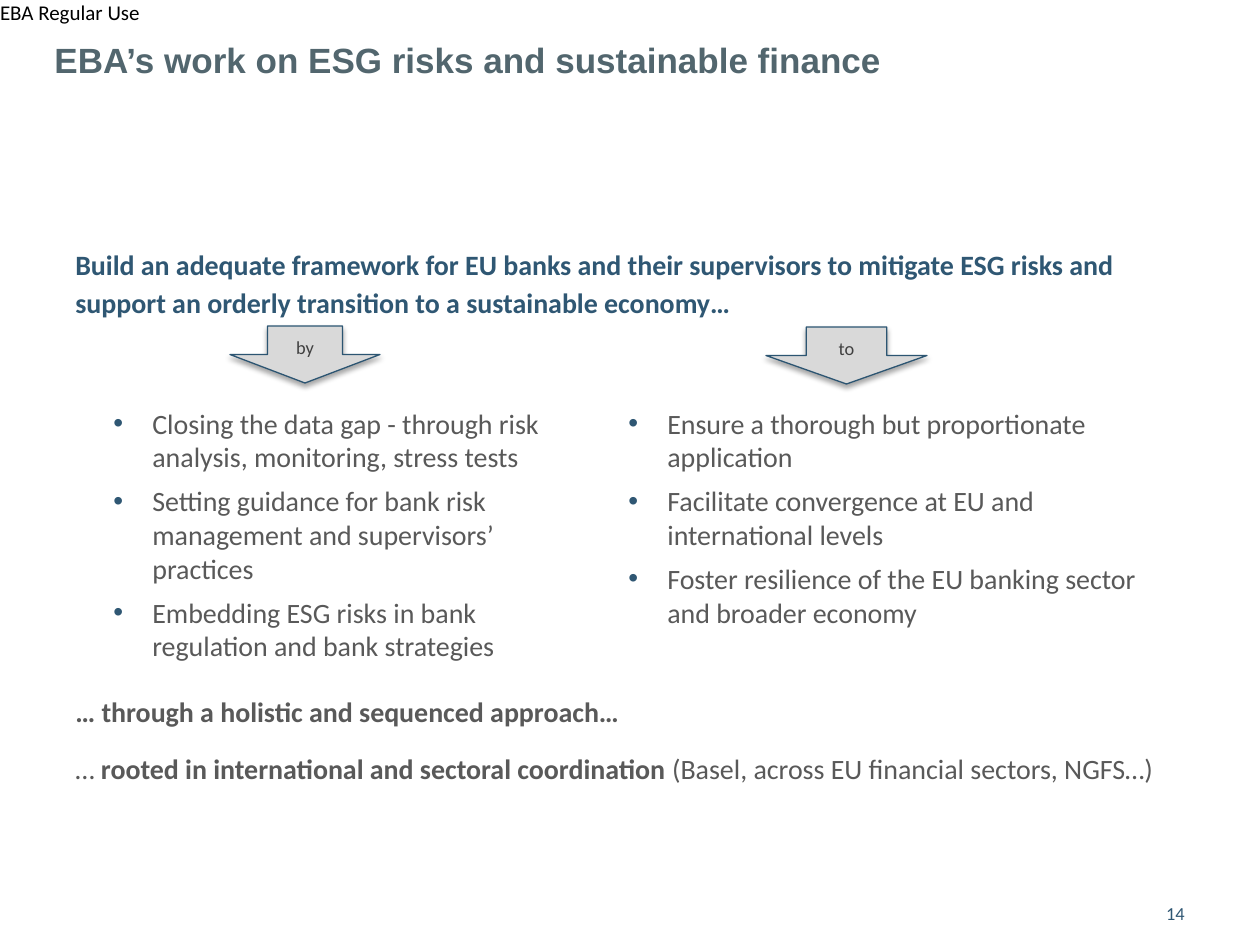
from lxml import etree
from pptx import Presentation
from pptx.dml.color import RGBColor
from pptx.enum.shapes import MSO_SHAPE as Shape
from pptx.enum.text import MSO_ANCHOR as Anchor, PP_ALIGN as Align
from pptx.oxml import parse_xml
from pptx.oxml.ns import nsdecls, qn
from pptx.util import Emu, Pt

COLORS = {
    "black": "000000", "slate": "52666E", "navy": "2F5773", "outline": "2C5572",
    "body": "595959", "label": "404040", "arrow": "D9D9D9",
}

# Content: each paragraph is a list of (text, bold) runs
CLASSIFICATION = [[("EBA Regular Use", False)]]
TITLE = [[("EBA’s work on ESG risks and sustainable finance", True)]]
GOAL = [[("Build an adequate framework for EU banks and their supervisors to mitigate "
          "ESG risks and support an orderly transition to a sustainable economy…", True)]]
APPROACH = [
    [("… through a holistic and sequenced approach…", True)],
    [("… ", False), ("rooted in international and sectoral coordination ", True),
     ("(Basel, across EU financial sectors, NGFS…)", False)],
]
PAGE_NUMBER = [[("14", False)]]

# Arrow label, arrow box, list box, list items
COLUMNS = [
    ("by", (230, 326, 150, 57), (101, 400, 472, 233), [
        "Closing the data gap - through risk analysis, monitoring, stress tests",
        "Setting guidance for bank risk management and supervisors’ practices",
        "Embedding ESG risks in bank regulation and bank strategies",
    ]),
    ("to", (766, 327, 161, 57), (616, 400, 543, 233), [
        "Ensure a thorough but proportionate application",
        "Facilitate convergence at EU and international levels",
        "Foster resilience of the EU banking sector and broader economy",
    ]),
]

PX = 914400 / 126
INDENT = 39


def px(value):
    return Emu(round(value * PX))


def rgb(name):
    return RGBColor.from_string(COLORS[name])


def add_bullet(paragraph):
    properties = paragraph._p.get_or_add_pPr()
    properties.set("marL", str(px(INDENT)))
    properties.set("indent", str(-px(INDENT)))
    color = etree.SubElement(properties, qn("a:buClr"))
    etree.SubElement(color, qn("a:srgbClr"), val=COLORS["navy"])
    etree.SubElement(properties, qn("a:buFont"), typeface="Arial")
    etree.SubElement(properties, qn("a:buChar"), char="•")


def write(text_frame, paragraphs, size, color, font="Calibri", align=Align.LEFT,
          line_spacing=None, gap=0, bullets=False):
    for index, runs in enumerate(paragraphs):
        paragraph = text_frame.add_paragraph() if index else text_frame.paragraphs[0]
        paragraph.alignment = align
        if line_spacing:
            paragraph.line_spacing = line_spacing
        if index and gap:
            paragraph.space_before = Pt(gap)
        if bullets:
            add_bullet(paragraph)
        for text, bold in runs:
            run = paragraph.add_run()
            run.text = text
            run.font.name = font
            run.font.size = Pt(size)
            run.font.bold = bold
            run.font.color.rgb = rgb(color)


def add_text(slide, box, paragraphs, size, color, **style):
    text_frame = slide.shapes.add_textbox(*map(px, box)).text_frame
    text_frame.word_wrap = True
    write(text_frame, paragraphs, size, color, **style)
    return text_frame


def add_arrow(slide, box, label):
    arrow = slide.shapes.add_shape(Shape.DOWN_ARROW, *map(px, box))
    arrow.fill.solid()
    arrow.fill.fore_color.rgb = rgb("arrow")
    arrow.line.color.rgb = rgb("outline")
    arrow.line.width = Pt(0.75)
    arrow.shadow.inherit = False
    effects = arrow._element.spPr.find(qn("a:effectLst"))
    effects.append(parse_xml(
        f'<a:outerShdw {nsdecls("a")} blurRad="{Pt(3.1)}" dist="{Pt(1.8)}" '
        f'dir="5400000" rotWithShape="0"><a:srgbClr val="{COLORS["black"]}">'
        '<a:alpha val="35000"/></a:srgbClr></a:outerShdw>'))
    arrow.text_frame.vertical_anchor = Anchor.MIDDLE
    write(arrow.text_frame, [[(label, False)]], 10.5, "label", align=Align.CENTER)


def main():
    presentation = Presentation()
    presentation.slide_width, presentation.slide_height = px(1260), px(945)
    slide = presentation.slides.add_slide(presentation.slide_layouts[6])

    # Classification mark, flush with the corner
    mark = add_text(slide, (0, 0, 145, 25), CLASSIFICATION, 12, "black")
    mark.word_wrap = False
    mark.margin_left = mark.margin_right = mark.margin_top = mark.margin_bottom = 0

    # Title and goal
    add_text(slide, (42, 32, 950, 77), TITLE, 20, "slate", font="Arial")
    add_text(slide, (63, 236, 1070, 183), GOAL, 16, "navy", line_spacing=1.15)

    # Two columns, each led by an arrow
    for label, arrow_box, list_box, items in COLUMNS:
        add_arrow(slide, arrow_box, label)
        add_text(slide, list_box, [[(item, False)] for item in items], 16, "body",
                 gap=6, bullets=True)

    # Approach and page number
    add_text(slide, (63, 687, 1154, 110), APPROACH, 16, "body", line_spacing=1.05, gap=12)
    add_text(slide, (1090, 896, 107, 30), PAGE_NUMBER, 10.5, "navy", align=Align.RIGHT)

    presentation.save("out.pptx")


if __name__ == "__main__":
    main()
